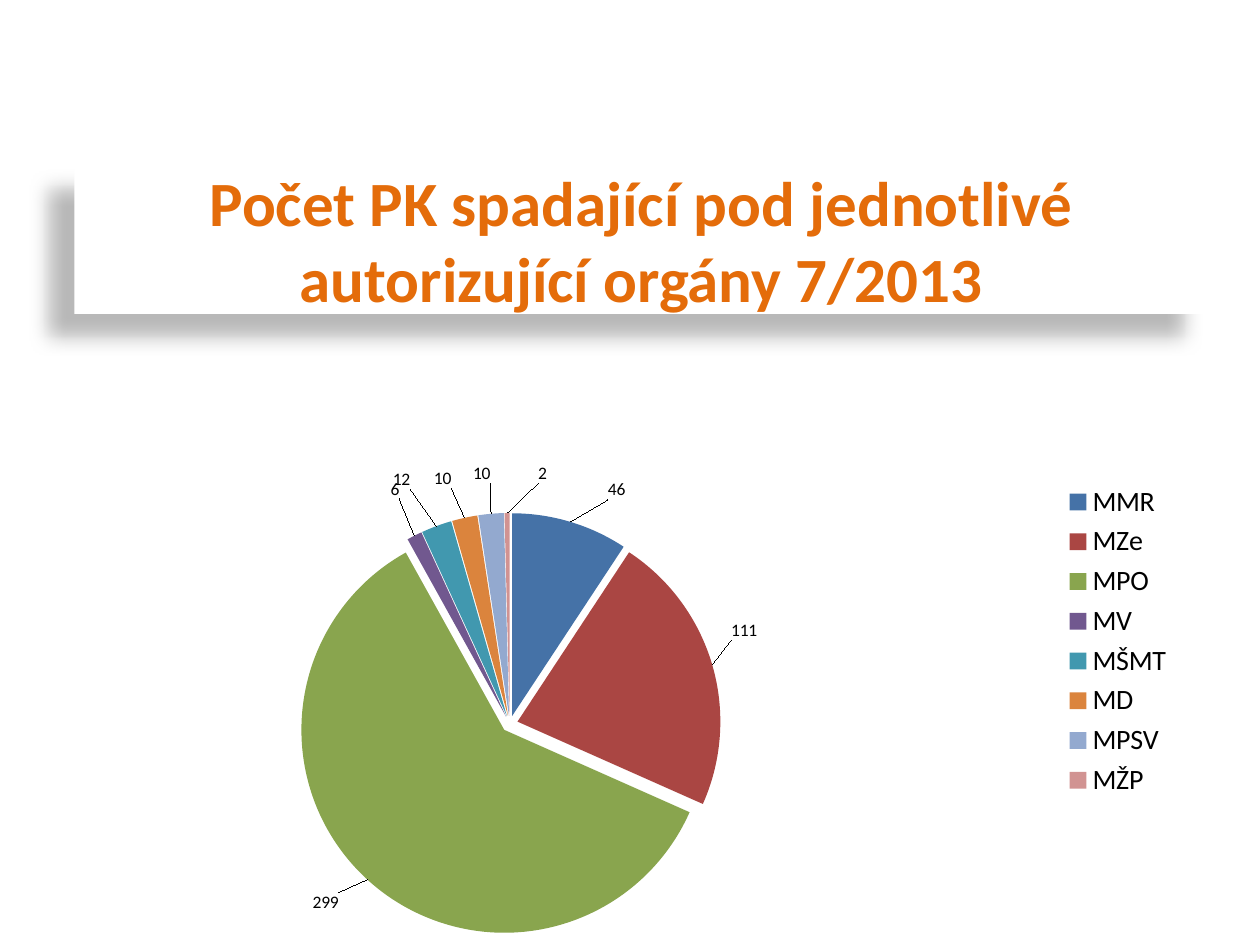
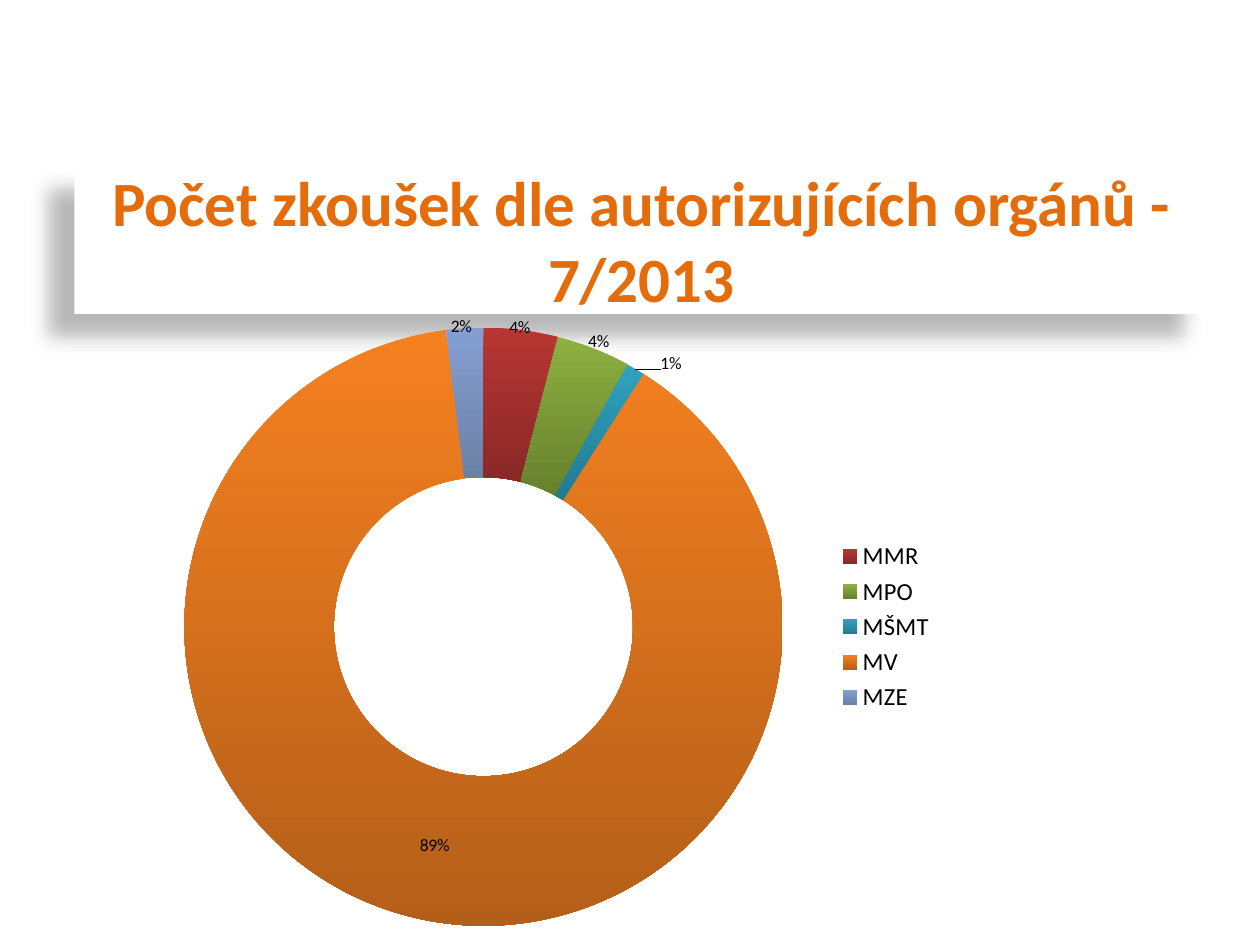
from dataclasses import dataclass

from lxml.etree import SubElement
from pptx import Presentation
from pptx.chart.data import CategoryChartData
from pptx.dml.color import RGBColor
from pptx.enum.chart import XL_CHART_TYPE, XL_LEGEND_POSITION
from pptx.enum.text import MSO_ANCHOR, MSO_AUTO_SIZE, PP_ALIGN
from pptx.oxml import parse_xml
from pptx.oxml.ns import nsdecls, qn
from pptx.util import Cm, Pt


@dataclass(frozen=True)
class Theme:
    font: str = "Calibri"
    title_color: str = "E46C0A"
    title_outline: str = "984807"
    band: str = "FFFFFF"
    text: str = "000000"
    title_size: int = 36
    label_size: int = 10
    qualification_legend: int = 16
    exam_legend: int = 14


THEME = Theme()
TITLE_ONLY = 5

# Authority: qualifications, slice colour, label shift (share of chart size)
QUALIFICATIONS = {
    "MMR": (46, "4572A7", (0.03, -0.02)),
    "MZe": (111, "AA4643", (0.01, -0.03)),
    "MPO": (299, "89A54E", (-0.02, 0.01)),
    "MV": (6, "71588F", (-0.01, -0.04)),
    "MŠMT": (12, "4198AF", (-0.02, -0.04)),
    "MD": (10, "DB843D", (-0.01, -0.03)),
    "MPSV": (10, "93A9CF", (0, -0.03)),
    "MŽP": (2, "D19392", (0.03, -0.03)),
}

# Authority: percent of exams, slice gradient (top, bottom), label shift
EXAMS = {
    "MD": (0, ("3A74B8", "2C5888"), None),
    "MMR": (4, ("B83633", "892826"), (0.01, -0.12)),
    "MPO": (4, ("8DB040", "66812D"), (0.04, -0.12)),
    "MPSV": (0, ("6F4A9A", "50356F"), None),
    "MŠMT": (1, ("2FA2C0", "227A90"), (0.09, -0.11)),
    "MV": (89, ("F58020", "B45F19"), (0, 0)),
    "MZE": (2, ("84A0D2", "6A80A6"), (-0.01, -0.12)),
    "MŽP": (0, ("C98A89", "966766"), None),
}


def rgb(value):
    return RGBColor.from_string(value)


# --- Title band ---
def add_shadow(shape):
    shape.shadow.inherit = False
    effects = shape.element.spPr.find(qn("a:effectLst"))
    effects.append(parse_xml(
        f'<a:outerShdw {nsdecls("a")} blurRad="{Pt(11.8)}" dist="{Pt(19.7)}" '
        'dir="8460000" algn="ctr" rotWithShape="0">'
        '<a:srgbClr val="000000"><a:alpha val="28000"/></a:srgbClr></a:outerShdw>'))


def add_title_run(paragraph, text):
    run = paragraph.add_run()
    run.text = text
    run.font.name = THEME.font
    run.font.size = Pt(THEME.title_size)
    run.font.bold = True
    run.font.color.rgb = rgb(THEME.title_color)
    run.font._element.insert(0, parse_xml(
        f'<a:ln {nsdecls("a")} w="{Pt(1)}"><a:solidFill>'
        f'<a:srgbClr val="{THEME.title_outline}"/></a:solidFill></a:ln>'))


def add_titled_slide(prs, *lines):
    slide = prs.slides.add_slide(prs.slide_layouts[TITLE_ONLY])
    title = slide.shapes.title
    title.left, title.top, title.width, title.height = Cm(1.5), Cm(3.33), Cm(22.86), Cm(3)
    title.fill.solid()
    title.fill.fore_color.rgb = rgb(THEME.band)
    add_shadow(title)
    frame = title.text_frame
    frame.word_wrap = True
    frame.auto_size = MSO_AUTO_SIZE.NONE
    frame.vertical_anchor = MSO_ANCHOR.MIDDLE
    paragraph = frame.paragraphs[0]
    paragraph.alignment = PP_ALIGN.CENTER
    for number, line in enumerate(lines):
        if number:
            paragraph.add_line_break()
        add_title_run(paragraph, line)
    return slide


# --- Charts ---
def manual_layout(x, y, size=None):
    extent = mode = ""
    if size:
        mode = ('<c:layoutTarget val="inner"/><c:xMode val="edge"/>'
                '<c:yMode val="edge"/>')
        extent = f'<c:w val="{size[0]}"/><c:h val="{size[1]}"/>'
    return (f'<c:layout {nsdecls("c")}><c:manualLayout>{mode}'
            f'<c:x val="{x}"/><c:y val="{y}"/>{extent}</c:manualLayout></c:layout>')


def place_plot(chart, x, y, width, height):
    plot_area = chart._chartSpace.chart.plotArea
    for layout in plot_area.findall(qn("c:layout")):
        plot_area.remove(layout)
    plot_area.insert(0, parse_xml(manual_layout(x, y, (width, height))))


def label_slices(series, shifts, percent=False, position=""):
    """Label each slice, moved by its shift; a shift of None hides the label."""
    place = f'<c:dLblPos val="{position}"/>' if position else ""
    show = place + "".join(
        f'<c:show{part} val="{int(on)}"/>' for part, on in (
            ("LegendKey", False), ("Val", not percent), ("CatName", False),
            ("SerName", False), ("Percent", percent), ("BubbleSize", False)))
    number_format = f'<c:numFmt formatCode="{"0%" if percent else "0"}" sourceLinked="0"/>'
    labels = ""
    for index, shift in enumerate(shifts):
        if shift is None:
            body = '<c:delete val="1"/>'
        else:
            body = (manual_layout(*shift) if any(shift) else "") + number_format + show
        labels += f'<c:dLbl><c:idx val="{index}"/>{body}</c:dLbl>'
    series._element.find(qn("c:cat")).addprevious(parse_xml(
        f'<c:dLbls {nsdecls("c")}>{labels}{number_format}{show}'
        '<c:showLeaderLines val="1"/></c:dLbls>'))


def explode_slices(series, percent):
    series._element.find(qn("c:tx")).addnext(
        parse_xml(f'<c:explosion {nsdecls("c")} val="{percent}"/>'))


def paint_slice(fill, color):
    if isinstance(color, str):
        fill.solid()
        fill.fore_color.rgb = rgb(color)
        return
    fill.gradient()
    fill.gradient_angle = 270
    for stop, shade in zip(fill.gradient_stops, color):
        stop.color.rgb = rgb(shade)


def add_legend(chart, size, hidden):
    chart.has_legend = True
    legend = chart.legend
    legend.position = XL_LEGEND_POSITION.RIGHT
    legend.include_in_layout = False
    legend.font.size = Pt(size)
    legend.font.name = THEME.font
    legend.font.color.rgb = rgb(THEME.text)
    anchor = legend._element.find(qn("c:legendPos"))
    for index in reversed(hidden):
        entry = parse_xml(f'<c:legendEntry {nsdecls("c")}/>')
        SubElement(entry, qn("c:idx")).set("val", str(index))
        SubElement(entry, qn("c:delete")).set("val", "1")
        anchor.addnext(entry)


def add_authority_chart(slide, kind, box, slices, legend_size):
    values, colors, shifts = zip(*slices.values())
    data = CategoryChartData()
    data.categories = list(slices)
    data.add_series("Series 1", values)
    chart = slide.shapes.add_chart(kind, *map(Cm, box), data).chart
    chart.has_title = False
    chart.font.name = THEME.font
    chart.font.size = Pt(THEME.label_size)
    chart.font.color.rgb = rgb(THEME.text)
    chart._chartSpace.chart.addnext(parse_xml(
        f'<c:spPr {nsdecls("c", "a")}><a:noFill/><a:ln><a:noFill/></a:ln></c:spPr>'))
    chart.plots[0].vary_by_categories = True
    for index, color in enumerate(colors):
        paint_slice(chart.plots[0].series[0].points[index].format.fill, color)
    add_legend(chart, legend_size, [i for i, shift in enumerate(shifts) if shift is None])
    return chart, chart.plots[0].series[0], shifts


# --- Slides ---
def build_qualifications(prs):
    slide = add_titled_slide(prs, "Počet PK spadající pod jednotlivé",
                             "autorizující orgány 7/2013")
    chart, series, shifts = add_authority_chart(
        slide, XL_CHART_TYPE.PIE, (0, 5.33, 23.9, 15.19), QUALIFICATIONS,
        THEME.qualification_legend)
    place_plot(chart, 0.16, 0.33, 0.54, 0.56)
    explode_slices(series, 4)
    label_slices(series, shifts, position="outEnd")


def build_exams(prs):
    slide = add_titled_slide(prs, "Počet zkoušek dle autorizujících orgánů - 7/2013")
    chart, series, shifts = add_authority_chart(
        slide, XL_CHART_TYPE.DOUGHNUT, (2.69, 6.22, 16.41, 12.83), EXAMS,
        THEME.exam_legend)
    place_plot(chart, 0.06, 0.03, 0.74, 0.94)
    label_slices(series, shifts, percent=True)


def main():
    prs = Presentation()
    prs.slide_width, prs.slide_height = Cm(25.4), Cm(19.05)
    build_qualifications(prs)
    build_exams(prs)
    prs.save("out.pptx")


if __name__ == "__main__":
    main()
